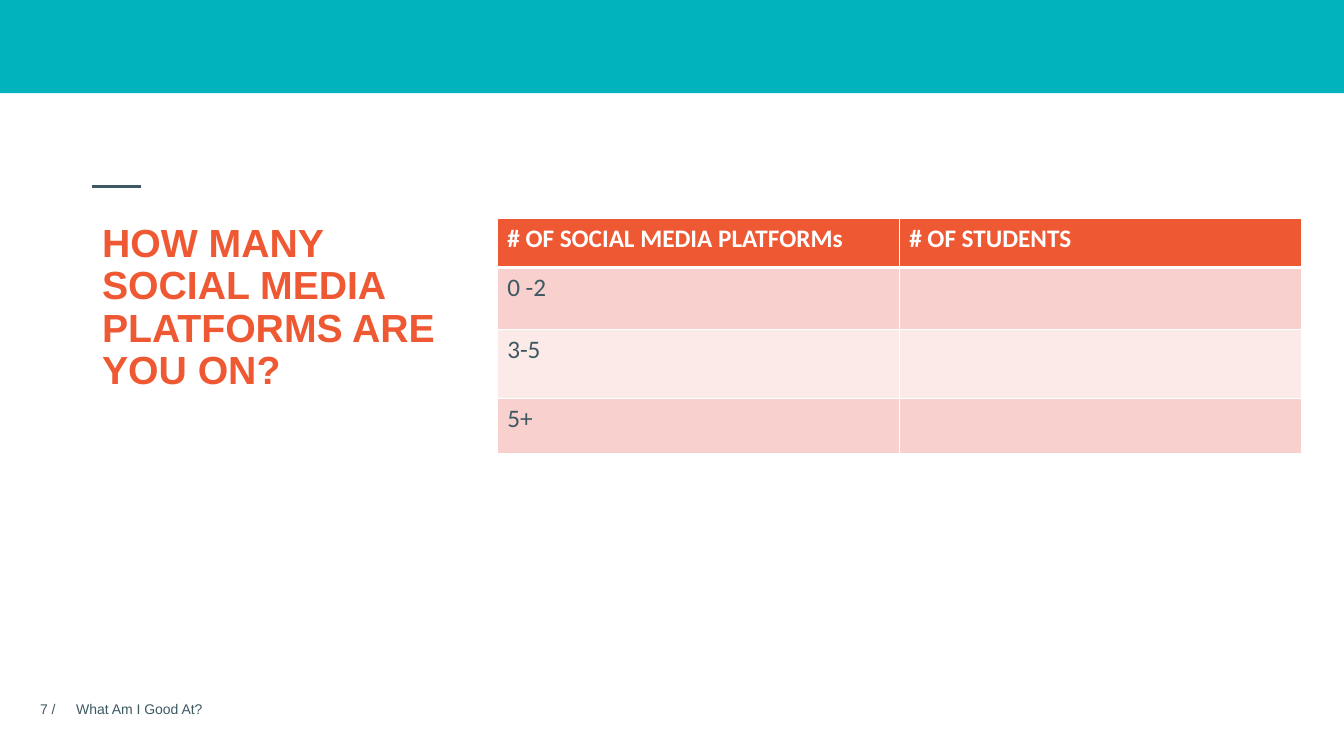
from lxml import etree
from pptx import Presentation
from pptx.dml.color import RGBColor
from pptx.enum.shapes import MSO_CONNECTOR, MSO_SHAPE
from pptx.enum.text import MSO_ANCHOR, MSO_AUTO_SIZE, PP_ALIGN
from pptx.oxml.ns import qn
from pptx.util import Cm, Pt

STRAIGHT = MSO_CONNECTOR.STRAIGHT
RECTANGLE = MSO_SHAPE.RECTANGLE
TOP = MSO_ANCHOR.TOP
LEFT = PP_ALIGN.LEFT
NO_AUTOFIT = MSO_AUTO_SIZE.NONE
TITLE_ONLY = 5

COLOURS = {
    "teal": "00B3BC",
    "slate": "3C5961",
    "orange": "EE5934",
    "rose": "F8D1CE",
    "blush": "FCEAE8",
    "white": "FFFFFF",
}
TITLE_FORMAT = {"name": "Arial", "size": Pt(28), "bold": True}
FOOTER_FORMAT = {"name": "Arial", "size": Pt(10), "bold": False}
HEADER_FORMAT = {"name": "Calibri", "size": Pt(18), "bold": True}
BODY_FORMAT = {"name": "Calibri", "size": Pt(18), "bold": False}

TABLE_ROWS = [
    ("# OF SOCIAL MEDIA PLATFORMs", "# OF STUDENTS"),
    ("0 -2", ""),
    ("3-5", ""),
    ("5+", ""),
]
ROW_HEIGHTS = [1.23, 1.56, 1.74, 1.4]
COLUMN_WIDTH = 10.13


def colour(name):
    return RGBColor.from_string(COLOURS[name])


def write(frame, text, values, colour_name):
    """Put one formatted paragraph into a text frame and return it."""
    frame.text = text
    para = frame.paragraphs[0]
    para.alignment = LEFT
    for target in (para.font, *(span.font for span in para.runs)):
        for name, value in values.items():
            setattr(target, name, value)
        target.color.rgb = colour(colour_name)
    return para


def add_band(page, width):
    band = page.shapes.add_shape(RECTANGLE, 0, 0, width, Cm(2.35))
    band.shadow.inherit = False
    band.fill.solid()
    band.fill.fore_color.rgb = colour("teal")
    band.line.fill.background()


def add_rule(page):
    rule = page.shapes.add_connector(STRAIGHT, Cm(2.32), Cm(4.7), Cm(3.56), Cm(4.7))
    rule.line.color.rgb = colour("slate")
    rule.line.width = Pt(2.25)
    etree.SubElement(rule._element.spPr, qn("a:effectLst"))


def set_title(page, text):
    title = page.shapes.title
    title.left, title.top, title.width, title.height = Cm(2.32), Cm(5.51), Cm(9.4), Cm(11)
    frame = title.text_frame
    frame.word_wrap = True
    frame.auto_size = NO_AUTOFIT
    frame.vertical_anchor = TOP
    para = write(frame, text, TITLE_FORMAT, "orange")
    para.line_spacing = 0.9


def add_footer(page, text, left, width):
    box = page.shapes.add_textbox(Cm(left), Cm(17.53), Cm(width), Cm(1.02))
    box.text_frame.word_wrap = True
    write(box.text_frame, text, FOOTER_FORMAT, "slate")


def set_borders(cell, bottom_width):
    """Draw white borders, placed ahead of the cell's fill as the schema asks."""
    properties = cell._tc.get_or_add_tcPr()
    widths = {"a:lnL": 1, "a:lnR": 1, "a:lnT": 1, "a:lnB": bottom_width}
    for position, (tag, width) in enumerate(widths.items()):
        border = etree.Element(qn(tag), w=str(Pt(width)))
        fill = etree.SubElement(border, qn("a:solidFill"))
        etree.SubElement(fill, qn("a:srgbClr"), val=COLOURS["white"])
        properties.insert(position, border)


def add_platform_table(page):
    row_count, column_count = len(TABLE_ROWS), len(TABLE_ROWS[0])
    table = page.shapes.add_table(
        row_count, column_count, Cm(12.53), Cm(5.51),
        Cm(COLUMN_WIDTH * column_count), Cm(sum(ROW_HEIGHTS)),
    ).table
    for column in table.columns:
        column.width = Cm(COLUMN_WIDTH)
    for index, (texts, height) in enumerate(zip(TABLE_ROWS, ROW_HEIGHTS)):
        table.rows[index].height = Cm(height)
        is_header = index == 0
        band = "orange" if is_header else ("blush", "rose")[index % 2]
        values = HEADER_FORMAT if is_header else BODY_FORMAT
        for cell, text in zip(table.rows[index].cells, texts):
            write(cell.text_frame, text, values, "white" if is_header else "slate")
            cell.fill.solid()
            cell.fill.fore_color.rgb = colour(band)
            set_borders(cell, 3 if is_header else 1)


def main():
    deck = Presentation()
    deck.slide_width, deck.slide_height = Cm(33.87), Cm(19.05)
    page = deck.slides.add_slide(deck.slide_layouts[TITLE_ONLY])
    add_band(page, deck.slide_width)
    add_rule(page)
    set_title(page, "HOW MANY SOCIAL MEDIA PLATFORMS ARE YOU ON?")
    add_footer(page, "7 /", left=0.76, width=1.24)
    add_footer(page, "What Am I Good At?", left=1.67, width=8.89)
    add_platform_table(page)
    deck.save("out.pptx")


if __name__ == "__main__":
    main()
